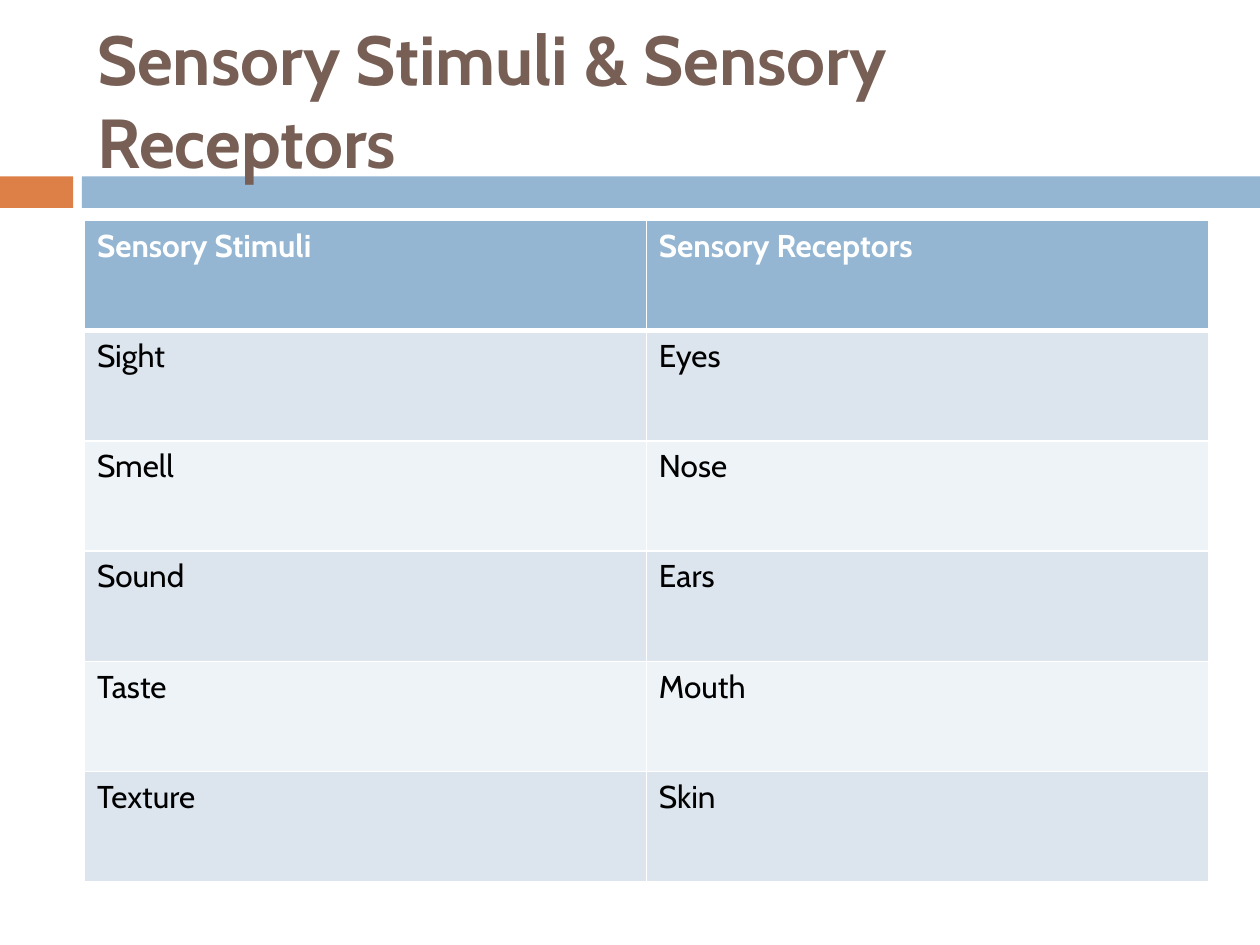
from lxml.etree import SubElement
from pptx import Presentation
from pptx.dml.color import RGBColor
from pptx.enum.shapes import MSO_SHAPE
from pptx.enum.text import MSO_ANCHOR, MSO_AUTO_SIZE, PP_ALIGN
from pptx.oxml.ns import qn
from pptx.util import Inches, Pt

FONT = "Cabin"
BLUE, ORANGE, BROWN = "94B6D2", "DD8047", "775F55"
WHITE, BLACK = "FFFFFF", "000000"
BANDS = ["EEF3F7", "DCE5EE"]


def rgb(hex_string):
    return RGBColor.from_string(hex_string)


def add_border(cell, side, points):
    """Draw a white line on one side (L, R, T or B) of a table cell."""
    line = SubElement(cell._tc.get_or_add_tcPr(), qn(f"a:ln{side}"), w=str(Pt(points)))
    fill = SubElement(line, qn("a:solidFill"))
    SubElement(fill, qn("a:srgbClr"), val=WHITE)


prs = Presentation()
prs.slide_width, prs.slide_height = Inches(10), Inches(7.5)
slide = prs.slides.add_slide(prs.slide_layouts[5])

# Title
title = slide.shapes.title
title.left, title.top = Inches(0.67), Inches(0.25)
title.width, title.height = Inches(8.92), Inches(1.08)
title.text_frame.text = "Sensory Stimuli & Sensory Receptors"
title.text_frame.word_wrap = True
title.text_frame.auto_size = MSO_AUTO_SIZE.NONE
title.text_frame.vertical_anchor = MSO_ANCHOR.MIDDLE
heading = title.text_frame.paragraphs[0]
heading.alignment = PP_ALIGN.LEFT
heading.font.name = FONT
heading.font.size = Pt(39.6)
heading.font.bold = True
heading.font.color.rgb = rgb(BROWN)

# Accent bars, placed behind the title
for left, width, color in [(0, 0.58, ORANGE), (0.65, 9.35, BLUE)]:
    bar = slide.shapes.add_shape(
        MSO_SHAPE.RECTANGLE, Inches(left), Inches(1.4), Inches(width), Inches(0.25))
    bar.shadow.inherit = False
    bar.fill.solid()
    bar.fill.fore_color.rgb = rgb(color)
    bar.line.fill.background()
    title.element.addprevious(bar.element)

# Table of stimuli and receptors
rows = [
    ("Sensory Stimuli", "Sensory Receptors"),
    ("Sight", "Eyes"),
    ("Smell", "Nose"),
    ("Sound", "Ears"),
    ("Taste", "Mouth"),
    ("Texture", "Skin"),
]
table = slide.shapes.add_table(
    len(rows), 2, Inches(0.67), Inches(1.75), Inches(8.92), Inches(5.25)).table

for r, row in enumerate(rows):
    is_header = r == 0
    for c, text in enumerate(row):
        cell = table.cell(r, c)
        cell.text = text
        font = cell.text_frame.paragraphs[0].font
        font.name = FONT
        font.size = Pt(18)
        font.bold = is_header
        font.color.rgb = rgb(WHITE if is_header else BLACK)
        add_border(cell, "L", 1)
        add_border(cell, "R", 1)
        add_border(cell, "T", 3 if r == 1 else 1)
        add_border(cell, "B", 3 if is_header else 1)
        cell.fill.solid()
        cell.fill.fore_color.rgb = rgb(BLUE if is_header else BANDS[r % 2])

prs.save("out.pptx")
